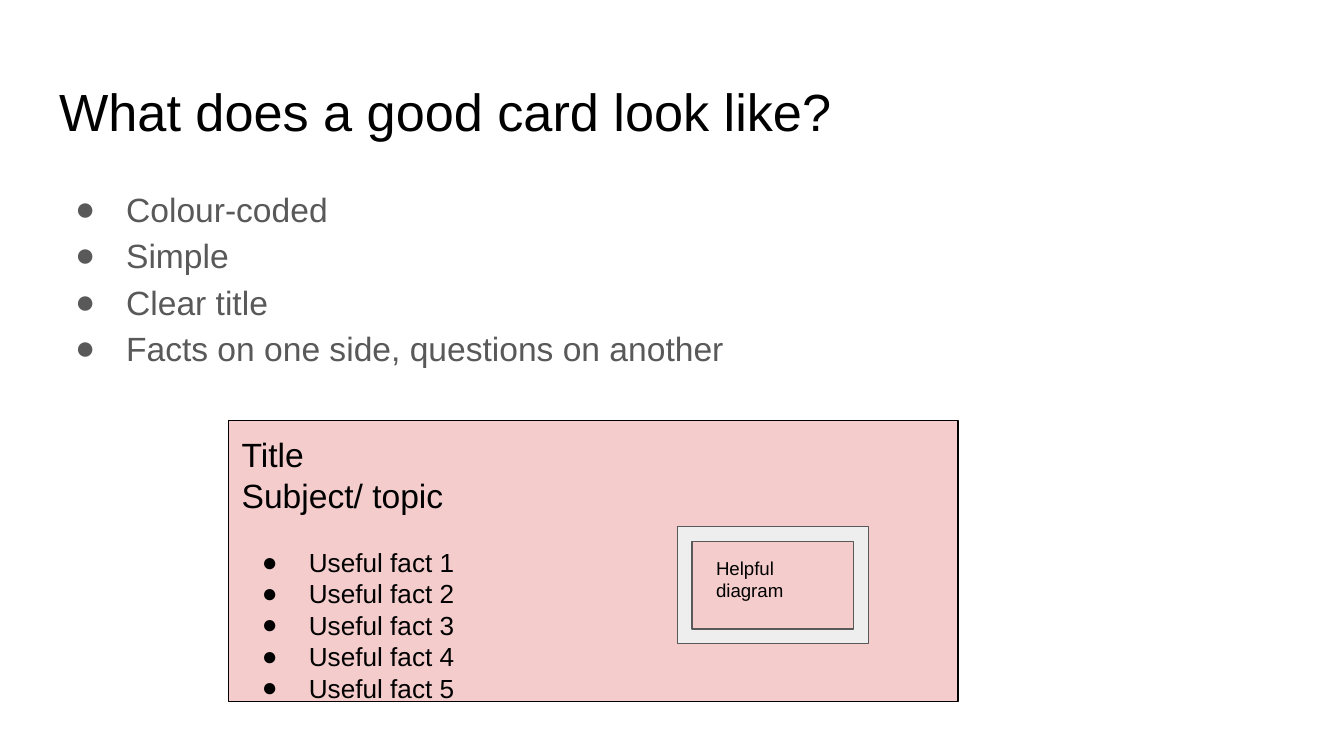
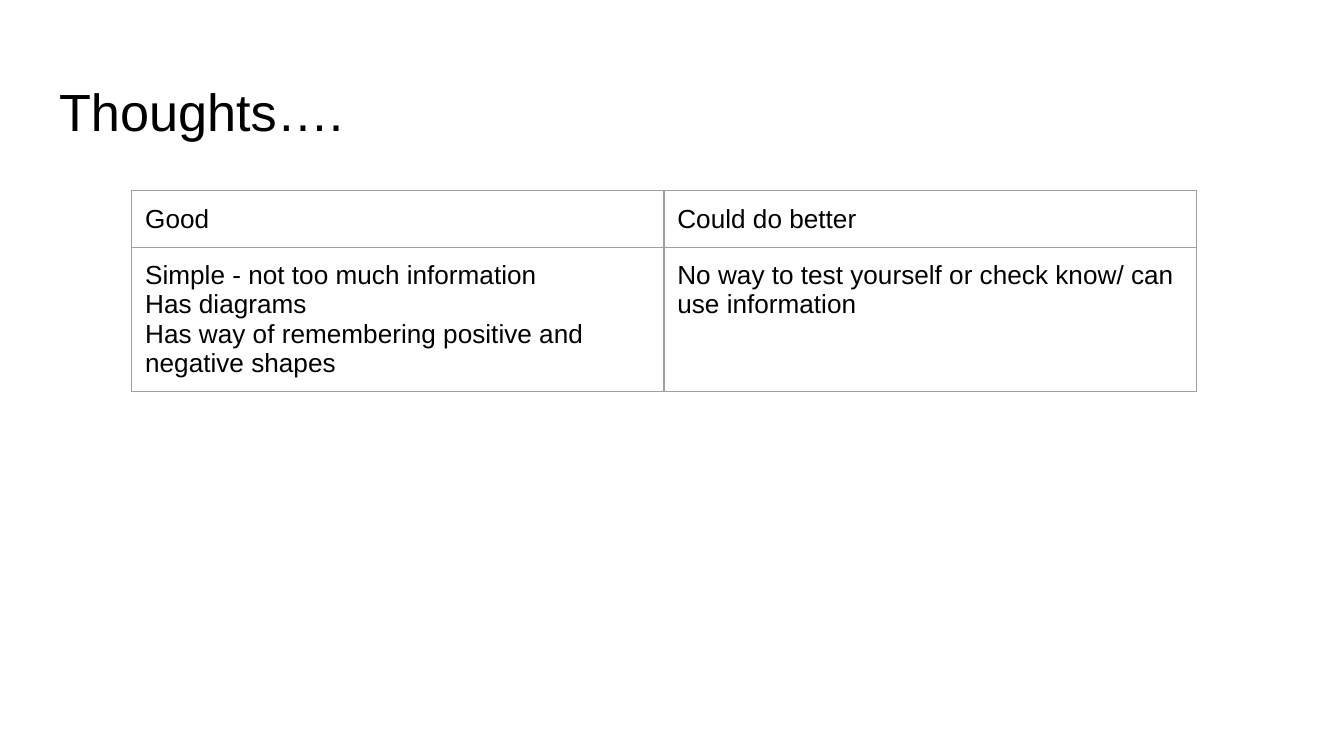
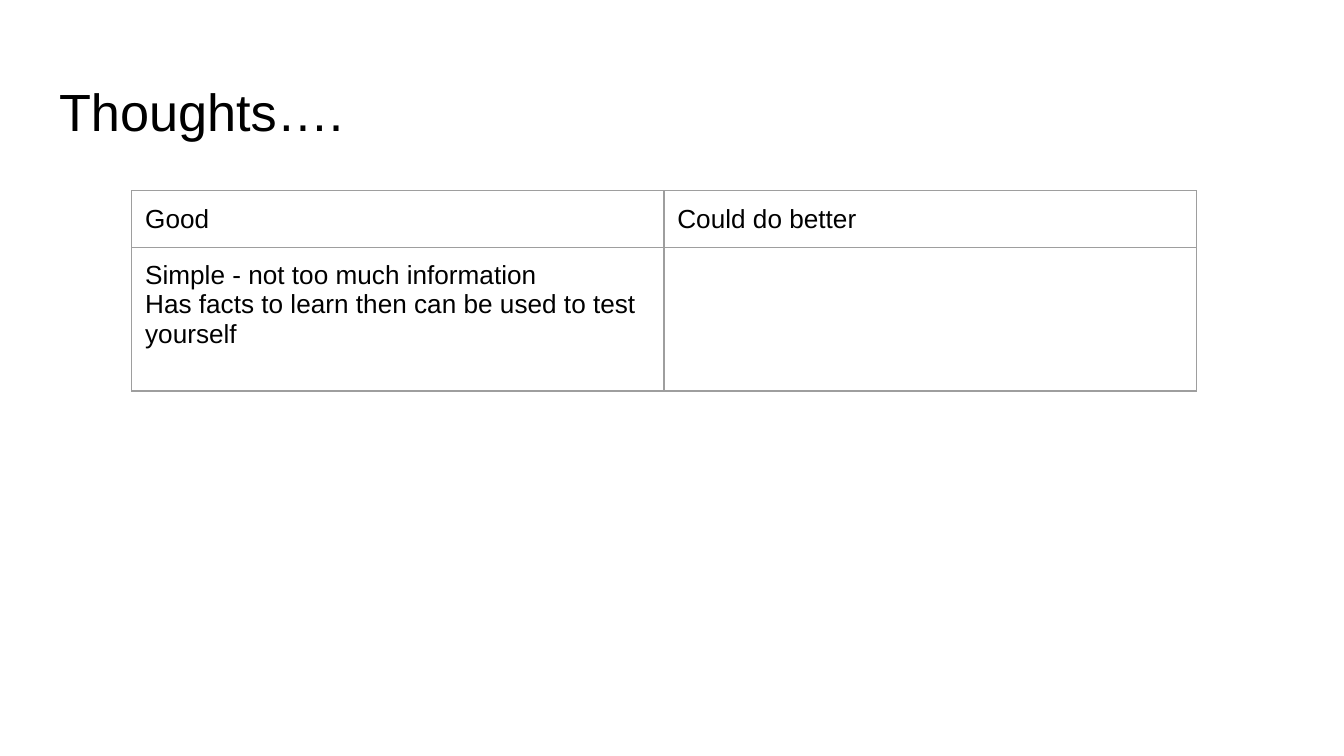
from lxml.etree import SubElement
from pptx import Presentation
from pptx.dml.color import RGBColor
from pptx.enum.shapes import MSO_SHAPE
from pptx.enum.text import MSO_ANCHOR, MSO_AUTO_SIZE, PP_ALIGN
from pptx.oxml.ns import qn
from pptx.util import Inches, Pt

FONT = "Arial"
BLACK = "000000"
GREY = "595959"
PINK = "F4CCCC"
PALE = "EEEEEE"
BORDER = "9E9E9E"
INSET = Inches(0.1)


def rgb(value):
    return RGBColor.from_string(value)


def add_run(p, text, size, color=BLACK):
    r = p.add_run()
    r.text = text
    r.font.name = FONT
    r.font.size = Pt(size)
    r.font.color.rgb = rgb(color)


def add_bullet(p, hanging, color):
    pPr = p._p.get_or_add_pPr()
    pPr.set("marL", str(Inches(0.5)))
    pPr.set("indent", str(-Inches(hanging)))
    buClr = SubElement(pPr, qn("a:buClr"))
    SubElement(buClr, qn("a:srgbClr"), val=color)
    SubElement(pPr, qn("a:buFont"), typeface=FONT)
    SubElement(pPr, qn("a:buChar"), char="●")


def set_frame(tf):
    tf.word_wrap = True
    tf.auto_size = MSO_AUTO_SIZE.NONE
    tf.vertical_anchor = MSO_ANCHOR.TOP
    tf.margin_left = tf.margin_right = INSET
    tf.margin_top = tf.margin_bottom = INSET


def add_lines(tf, lines, size, color=BLACK, hanging=None, spacing=None, before=0):
    for i, text in enumerate(lines):
        p = tf.paragraphs[0] if not tf.paragraphs[0].runs else tf.add_paragraph()
        p.alignment = PP_ALIGN.LEFT
        if spacing:
            p.line_spacing = spacing
        if before and i == 0:
            p.space_before = Pt(before)
        if hanging:
            add_bullet(p, hanging, color)
        add_run(p, text, size, color)


def add_title_slide(prs, title):
    s = prs.slides.add_slide(prs.slide_layouts[5])
    sp = s.shapes.title
    sp.left, sp.top = Inches(0.34), Inches(0.49)
    sp.width, sp.height = Inches(9.32), Inches(0.63)
    set_frame(sp.text_frame)
    add_lines(sp.text_frame, [title], 28)
    return s


def add_box(s, kind, left, top, width, height, fill, line=None):
    sp = s.shapes.add_shape(kind, Inches(left), Inches(top), Inches(width), Inches(height))
    sp.shadow.inherit = False
    sp.fill.solid()
    sp.fill.fore_color.rgb = rgb(fill)
    if line:
        sp.line.color.rgb = rgb(line)
        sp.line.width = Pt(0.75)
    else:
        sp.line.fill.background()
    set_frame(sp.text_frame)
    return sp


def add_bullet_list(s, items):
    sp = s.shapes.add_textbox(Inches(0.34), Inches(1.26), Inches(9.32), Inches(3.74))
    set_frame(sp.text_frame)
    add_lines(sp.text_frame, items, 18, GREY, hanging=0.38, spacing=1.15)


def add_sample_card(s):
    card = add_box(s, MSO_SHAPE.RECTANGLE, 1.7, 3.13, 5.43, 2.09, PINK, BLACK)
    add_lines(card.text_frame, ["Title", "Subject/ topic"], 18)
    facts = [f"Useful fact {n}" for n in range(1, 6)]
    add_lines(card.text_frame, facts, 14, hanging=0.35, before=17)
    frame = add_box(s, MSO_SHAPE.FRAME, 5.04, 3.92, 1.42, 0.87, PALE, GREY)
    frame.adjustments[0] = 0.125
    diagram = add_box(s, MSO_SHAPE.RECTANGLE, 5.23, 4.04, 1.06, 0.63, PINK)
    add_lines(diagram.text_frame, ["Helpful diagram"], 10)


def set_borders(cell):
    tcPr = cell._tc.get_or_add_tcPr()
    for i, side in enumerate(("lnL", "lnR", "lnT", "lnB")):
        ln = tcPr.makeelement(qn(f"a:{side}"), {"w": str(Pt(0.75))})
        fill = SubElement(ln, qn("a:solidFill"))
        SubElement(fill, qn("a:srgbClr"), val=BORDER)
        tcPr.insert(i, ln)


def add_thoughts_table(s, good, better):
    heights = (0.42, 1.07)
    table = s.shapes.add_table(2, 2, Inches(0.98), Inches(1.42),
                               Inches(7.92), Inches(sum(heights))).table
    table.first_row = False
    table.horz_banding = False
    for row, height in zip(table.rows, heights):
        row.height = Inches(height)
    rows = ((["Good"], ["Could do better"]), (good, better))
    for i, row in enumerate(rows):
        for j, lines in enumerate(row):
            cell = table.cell(i, j)
            cell.fill.background()
            cell.margin_left = cell.margin_right = INSET
            cell.margin_top = cell.margin_bottom = INSET
            set_borders(cell)
            add_lines(cell.text_frame, lines, 14)


def main():
    prs = Presentation()
    prs.slide_width = Inches(10)
    prs.slide_height = prs.slide_width * 9 // 16

    s = add_title_slide(prs, "What does a good card look like?")
    add_bullet_list(s, ["Colour-coded", "Simple", "Clear title",
                        "Facts on one side, questions on another"])
    add_sample_card(s)

    thoughts = (
        (["Simple - not too much information", "Has diagrams",
          "Has way of remembering positive and negative shapes"],
         ["No way to test yourself or check know/ can use information"]),
        (["Simple - not too much information",
          "Has facts to learn then can be used to test yourself"], []),
    )
    for good, better in thoughts:
        s = add_title_slide(prs, "Thoughts….")
        add_thoughts_table(s, good, better)

    prs.save("out.pptx")


if __name__ == "__main__":
    main()
